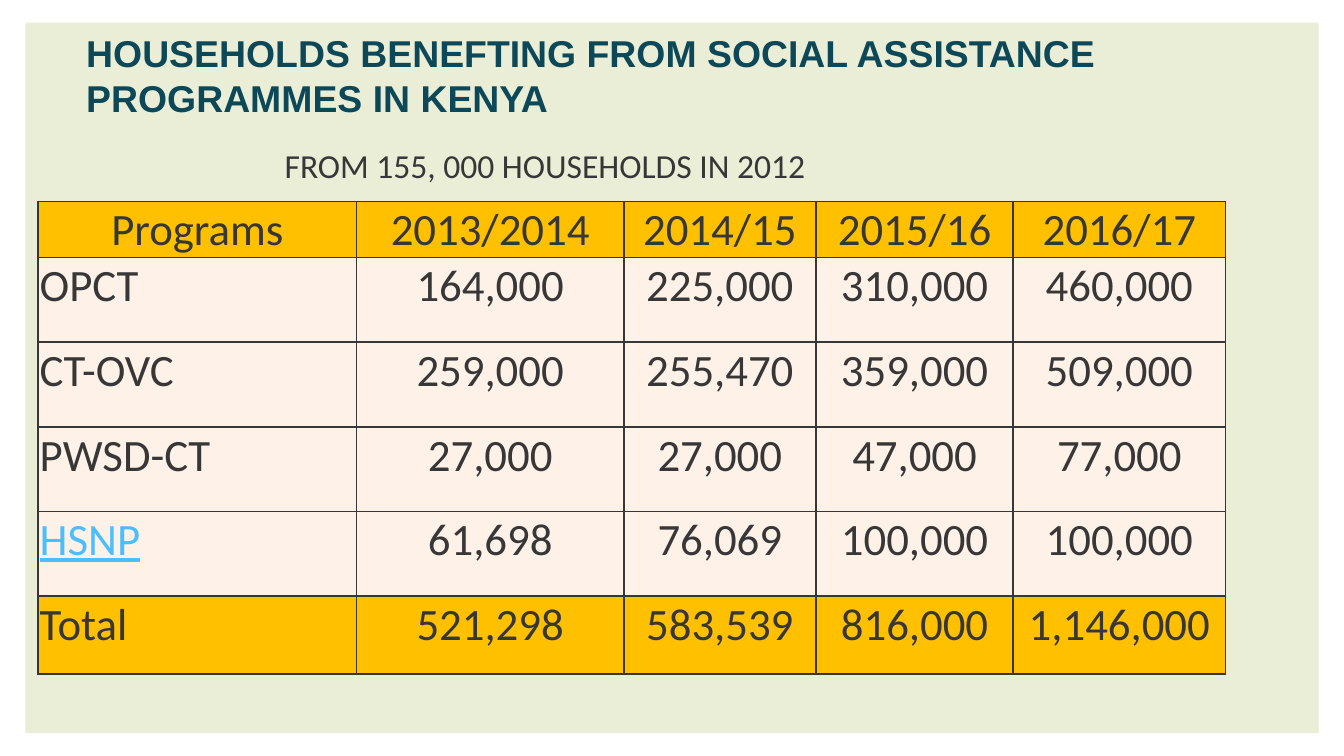
import pptx
import pptx.dml.color
import pptx.enum.shapes
import pptx.enum.text
import pptx.oxml
import pptx.oxml.ns
import pptx.util

Cm = pptx.util.Cm
Pt = pptx.util.Pt
INK, TEAL, LINK = "373737", "0C4857", "4ABEFF"
GOLD, CREAM, SAGE, WHITE = "FFC000", "FEF2E8", "EBEED7", "FFFFFF"
WIDTH, HEIGHT = 25.4, 14.29
SIDE, EDGE = 0.48, 0.43

ROWS = [
    ("Programs", "2013/2014", "2014/15", "2015/16", "2016/17"),
    ("OPCT", "164,000", "225,000", "310,000", "460,000"),
    ("CT-OVC", "259,000", "255,470", "359,000", "509,000"),
    ("PWSD-CT", "27,000", "27,000", "47,000", "77,000"),
    ("HSNP", "61,698", "76,069", "100,000", "100,000"),
    ("Total", "521,298", "583,539", "816,000", "1,146,000"),
]
COLUMN_WIDTHS = (6.02, 5.05, 3.63, 3.73, 4.01)
ROW_HEIGHTS = (1.06, 1.6, 1.6, 1.6, 1.6, 1.47)


def colour(value):
    return pptx.dml.color.RGBColor.from_string(value)


class SlideWriter:
    """Holds the text style and the current slide, and adds elements to it."""

    def __init__(self, page, font="Calibri", ink=INK):
        self.page, self.font, self.ink = page, font, ink

    def style(self, para, size, font=None, ink=None, bold=False):
        para.font.name = font or self.font
        para.font.size = Pt(size)
        para.font.bold = bold
        para.font.color.rgb = colour(ink or self.ink)

    def panel(self, left, top, width, height, fill):
        shape = self.page.shapes.add_shape(
            pptx.enum.shapes.MSO_SHAPE.RECTANGLE, Cm(left), Cm(top), Cm(width), Cm(height))
        shape.shadow.inherit = False
        shape.fill.solid()
        shape.fill.fore_color.rgb = colour(fill)
        shape.line.fill.background()

    def backdrop(self):
        self.panel(0, 0, WIDTH, HEIGHT, SAGE)
        for left in (0, WIDTH - SIDE):
            self.panel(left, 0, SIDE, HEIGHT, WHITE)
        for top in (0, HEIGHT - EDGE):
            self.panel(0, top, WIDTH, EDGE, WHITE)

    def text(self, left, top, width, height, words, size, wrap=False, **look):
        box = self.page.shapes.add_textbox(Cm(left), Cm(top), Cm(width), Cm(height))
        frame = box.text_frame
        frame.word_wrap = wrap
        frame.text = words
        self.style(frame.paragraphs[0], size, **look)
        return frame

    def title(self, left, top, width, height, words):
        frame = self.text(left, top, width, height, words, 20, wrap=True,
                          font="Arial", ink=TEAL, bold=True)
        frame.margin_left = frame.margin_top = frame.margin_bottom = 0
        frame.vertical_anchor = pptx.enum.text.MSO_ANCHOR.TOP

    def borders(self, cell):
        properties = cell._tc.get_or_add_tcPr()
        for side in "LRTB":
            properties.append(pptx.oxml.parse_xml(
                f'<a:ln{side} {pptx.oxml.ns.nsdecls("a")} w="12700"><a:solidFill>'
                f'<a:srgbClr val="{self.ink}"/></a:solidFill></a:ln{side}>'))

    def cell(self, cell, words, fill, centred, ink):
        cell.margin_left = cell.margin_top = cell.margin_right = Cm(0.03)
        cell.margin_bottom = 0
        self.borders(cell)
        cell.fill.solid()
        cell.fill.fore_color.rgb = colour(fill)
        cell.text = words
        para = cell.text_frame.paragraphs[0]
        align = pptx.enum.text.PP_ALIGN
        para.alignment = align.CENTER if centred else align.LEFT
        self.style(para, 24, ink=ink)
        para.font.underline = ink == LINK

    def table(self, left, top, widths, heights, rows):
        table = self.page.shapes.add_table(
            len(rows), len(widths), Cm(left), Cm(top), Cm(sum(widths)), Cm(sum(heights))).table
        for column, width in zip(table.columns, widths):
            column.width = Cm(width)
        for row, height in zip(table.rows, heights):
            row.height = Cm(height)
        for r, row in enumerate(rows):
            fill = GOLD if r in (0, len(rows) - 1) else CREAM
            for c, words in enumerate(row):
                ink = LINK if words == "HSNP" else self.ink
                self.cell(table.cell(r, c), words, fill, r == 0 or c > 0, ink)


def main():
    deck = pptx.Presentation()
    deck.slide_width, deck.slide_height = Cm(WIDTH), Cm(HEIGHT)
    writer = SlideWriter(deck.slides.add_slide(deck.slide_layouts[6]))
    writer.backdrop()
    writer.title(1.63, 0.58, 22.25, 1.83,
                 "HOUSEHOLDS BENEFTING FROM SOCIAL ASSISTANCE PROGRAMMES IN KENYA")
    writer.table(0.72, 3.81, COLUMN_WIDTHS, ROW_HEIGHTS, ROWS)
    writer.text(5.13, 2.62, 10.36, 1.02, "FROM 155, 000 HOUSEHOLDS IN 2012", 18)
    deck.save("out.pptx")


if __name__ == "__main__":
    main()
